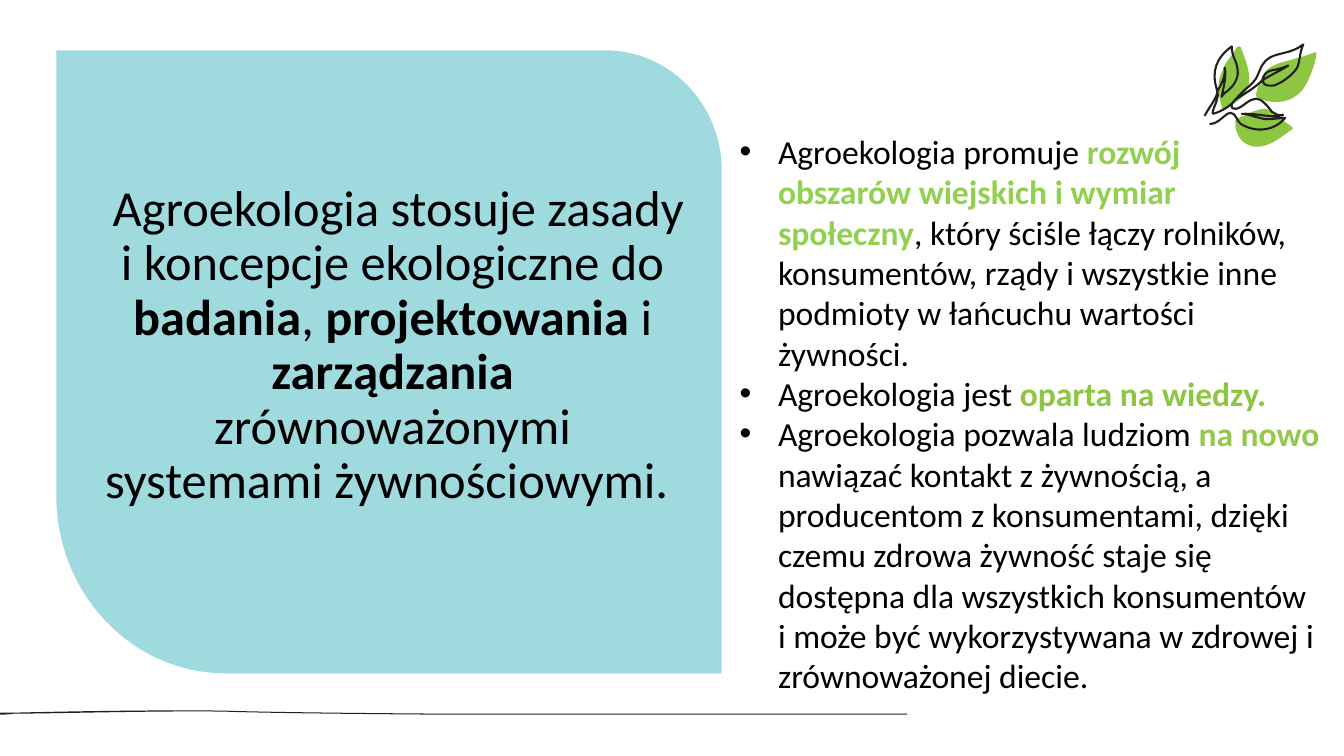
from lxml.etree import SubElement
from pptx import Presentation
from pptx.dml.color import RGBColor
from pptx.enum.text import MSO_ANCHOR, PP_ALIGN
from pptx.oxml.ns import qn
from pptx.util import Emu, Pt

SCALE = 9144  # EMU in one px, 100 px to the inch
INK, LEAF, TEAL, BLACK = "231F20", "8DC641", "9FDADF", "000000"

# Outlines: a start point, then lines (x, y) or curves (x1, y1, x2, y2, x, y)
LEAVES = [
    [(17, 67), (27, 62, 38, 54, 39, 43), (41, 31, 35, 18, 31, 7),
     (30, 5, 28, 6, 27, 7), (24, 13, 20, 17, 16, 23), (14, 27, 12, 32, 10, 37),
     (8, 46, 9, 56, 12, 65), (11, 66, 12, 69, 14, 68)],
    [(86, 55), (92, 51, 96, 44, 99, 37), (102, 30, 105, 22, 106, 14),
     (107, 12, 105, 11, 104, 12), (97, 15, 89, 17, 82, 19),
     (76, 21, 69, 22, 64, 25), (58, 27, 55, 31, 52, 36),
     (50, 42, 47, 48, 46, 54), (46, 56, 47, 57, 48, 57),
     (60, 63, 75, 63, 86, 55)],
    [(81, 89), (83, 88, 83, 87, 82, 86), (76, 82, 71, 78, 66, 74),
     (63, 71, 59, 68, 54, 68), (50, 68, 46, 70, 42, 71),
     (39, 73, 35, 75, 31, 76), (29, 77, 28, 77, 26, 79),
     (24, 79, 25, 82, 26, 82), (25, 85, 26, 89, 27, 91),
     (29, 97, 33, 102, 39, 104), (55, 110, 69, 97, 81, 89)],
]
STEMS = [
    # Left leaf with its two veins
    [(3, 73), (3, 68, 6, 64, 7, 60), (8, 57, 9, 54, 7, 48),
     (2, 31, 6, 18, 22, 6), (22, 10, 23, 15, 25, 19), (27, 23, 28, 28, 28, 33),
     (27, 41, 23, 46, 18, 50), (16, 51, 14, 53, 12, 56),
     (14, 46, 17, 35, 15, 27), (16, 36, 12, 43, 8, 50),
     (7, 58, 1, 64, -5, 75)],
    # Right leaf with its vein
    [(3, 73), (11, 71, 17, 67, 22, 63), (26, 58, 31, 53, 35, 49),
     (40, 45, 46, 40, 48, 34), (51, 27, 52, 22, 60, 17),
     (69, 12, 82, 13, 93, 4), (89, 13, 90, 20, 87, 27),
     (83, 34, 71, 43, 63, 45), (58, 45, 54, 45, 53, 41),
     (52, 34, 57, 30, 66, 29), (70, 28, 74, 27, 78, 25),
     (71, 30, 61, 34, 52, 40), (46, 46, 37, 52, 25, 59)],
    # Lower leaf
    [(22, 63), (21, 68, 24, 68, 26, 68), (33, 67, 38, 58, 47, 58),
     (54, 59, 60, 69, 62, 71), (65, 73, 68, 75, 73, 74),
     (61, 78, 49, 72, 32, 73), (39, 73, 44, 76, 50, 77),
     (59, 80, 64, 77, 75, 77), (64, 90, 46, 92, 31, 83),
     (27, 80, 26, 72, 21, 72), (15, 72, 10, 83, 0, 83)],
]


def px(num):
    return Emu(round(num * SCALE))


def tint(code):
    return RGBColor.from_string(code)


def bend(shape, routes):
    """Join the three points of each curve into one Bezier segment."""
    marks = shape._element.iter(qn("a:lnTo"))
    parts = [part for route in routes for part in route[1:]]
    marks = iter(list(marks))
    for part in parts:
        first = next(marks)
        if len(part) == 6:
            first.tag = qn("a:cubicBezTo")
            for _ in range(2):
                mark = next(marks)
                first.append(mark[0])
                mark.getparent().remove(mark)


def draw(shapes, routes, left, top, fill=None, line=None):
    def spots(part):
        return [(px(left + x), px(top + y))
                for x, y in zip(part[::2], part[1::2])]

    pen = shapes.build_freeform(*spots(routes[0][0])[0], scale=1.0)
    for num, route in enumerate(routes):
        if num:
            pen.move_to(*spots(route[0])[0])
        dots = [dot for part in route[1:] for dot in spots(part)]
        pen.add_line_segments(dots, close=fill is not None)
    shape = pen.convert_to_shape()
    bend(shape, routes)
    shape.shadow.inherit = False
    if fill:
        shape.fill.solid()
        shape.fill.fore_color.rgb = tint(fill)
    else:
        shape.fill.background()
    if line:
        shape.line.color.rgb = tint(line)
        shape.line.width = Pt(1.5)
    else:
        shape.line.fill.background()


def bullet(para, gap):
    props = para._p.get_or_add_pPr()
    props.set("marL", str(px(gap)))
    props.set("indent", str(-px(gap)))
    shade = SubElement(props, qn("a:buClr"))
    SubElement(shade, qn("a:srgbClr"), val=BLACK)
    SubElement(props, qn("a:buFont"), typeface="Arial")
    SubElement(props, qn("a:buChar"), char="•")


def write(slide, paras, box, size, align=PP_ALIGN.LEFT, anchor=MSO_ANCHOR.TOP,
          space=None, gap=0):
    """Each paragraph is a list of (text, bold colour or None)."""
    frame = slide.shapes.add_textbox(*map(px, box)).text_frame
    frame.word_wrap = True
    frame.vertical_anchor = anchor
    for num, runs in enumerate(paras):
        para = frame.add_paragraph() if num else frame.paragraphs[0]
        para.alignment = align
        if space:
            para.line_spacing = space
        if gap:
            bullet(para, gap)
        for text, strong in runs:
            run = para.add_run()
            run.text = text
            run.font.name = "Calibri"
            run.font.size = Pt(size)
            run.font.bold = strong is not None
            run.font.color.rgb = tint(strong or BLACK)


def ground(slide, left, top, width):
    route = [(width, 5), (443, 5), (441, 5, 280, 4, 223, 2),
             (155, 1, 52, 4, 14, 4), (6, 5, 1, 5, 0, 5), (0, 3),
             (1, 3, 6, 3, 14, 3), (52, 2, 155, 0, 223, 1),
             (281, 3, 441, 4, 443, 4), (width, 4)]
    draw(slide.shapes, [route], left, top, fill=INK)


def panel(slide, left, top, width, height):
    # Two opposite corners are rounded
    route = [(width, height), (168, height),
             (75, height, 0, height - 79, 0, height - 176), (0, 0),
             (width - 115, 0), (width - 52, 0, width, 53, width, 119)]
    draw(slide.shapes, [route], left, top, fill=TEAL)
    runs = [(" Agroekologia stosuje zasady i koncepcje ekologiczne do ", None),
            ("badania", BLACK), (", ", None), ("projektowania ", BLACK),
            ("i ", None), ("zarządzania ", BLACK),
            ("zrównoważonymi systemami żywnościowymi. ", None)]
    write(slide, [runs], (left + 33, top + 128, 601, 331), 36,
          align=PP_ALIGN.CENTER, anchor=MSO_ANCHOR.MIDDLE, space=0.9)


def points(slide, *box):
    paras = [
        [("Agroekologia promuje ", None),
         ("rozwój obszarów wiejskich i wymiar społeczny", "92D050"),
         (", który ściśle łączy rolników, konsumentów, rządy i wszystkie inne "
          "podmioty w łańcuchu wartości żywności.", None)],
        [("Agroekologia jest ", None), ("oparta na wiedzy.", LEAF)],
        [("Agroekologia pozwala ludziom ", None), ("na nowo ", "94C94C"),
         ("nawiązać kontakt z żywnością, a producentom z konsumentami, dzięki "
          "czemu zdrowa żywność staje się dostępna dla wszystkich konsumentów "
          "i może być wykorzystywana w zdrowej i zrównoważonej diecie.", None)],
    ]
    write(slide, paras, box, 24, gap=38)


def sprig(slide, left, top):
    group = slide.shapes.add_group_shape()
    for route in LEAVES:
        draw(group.shapes, [route], left, top, fill=LEAF)
    draw(group.shapes, STEMS, left, top, line=INK)


def main():
    deck = Presentation()
    deck.slide_width, deck.slide_height = px(1333.33), px(750)
    slide = deck.slides.add_slide(deck.slide_layouts[6])
    ground(slide, 0, 704, 900)
    panel(slide, 56, 50, 660, 618)
    points(slide, 724, 125, 595, 576)
    sprig(slide, 1200, 40)
    deck.save("out.pptx")


if __name__ == "__main__":
    main()
